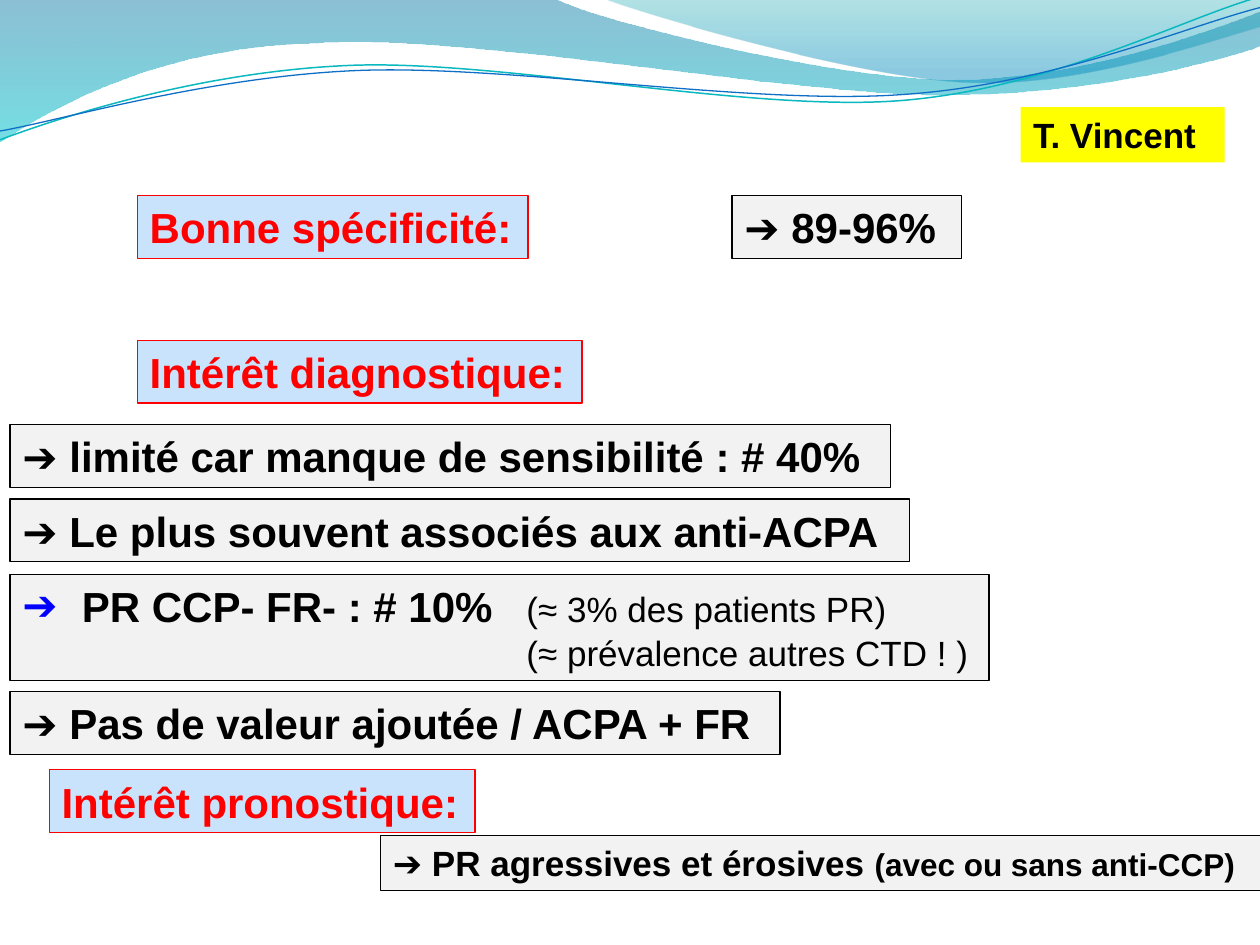
from math import cos, radians, sin

from lxml import etree
from pptx import Presentation
from pptx.dml.color import RGBColor
from pptx.enum.text import MSO_ANCHOR, MSO_AUTO_SIZE
from pptx.oxml.ns import qn
from pptx.util import Inches, Pt

RED = RGBColor(0xFF, 0x00, 0x00)
BLACK = RGBColor(0x00, 0x00, 0x00)
BLUE = RGBColor(0x00, 0x00, 0xFF)
YELLOW = RGBColor(0xFF, 0xFF, 0x00)
PALE_BLUE = RGBColor(0xC8, 0xE3, 0xFB)
PALE_GREY = RGBColor(0xF2, 0xF2, 0xF2)
DEEP_BLUE = RGBColor(0x00, 0x74, 0xA1)
CYAN = RGBColor(0x00, 0xC6, 0xCF)
TEAL = RGBColor(0x00, 0xA1, 0xA9)
SKY = RGBColor(0x00, 0x8B, 0xBF)
LINE_TEAL = RGBColor(0x0A, 0xB8, 0xBF)
LINE_BLUE = RGBColor(0x0F, 0x6F, 0xC6)

HEADING = {"fill": PALE_BLUE, "line": RED, "color": RED}
FINDING = {"fill": PALE_GREY, "line": BLACK, "color": BLACK}
LABEL = {"fill": YELLOW, "line": None, "color": BLACK}
TILT = -2.7  # degrees


def add_path(s, box, segments, close, tilt=0):
    """Freeform with curves: 2 numbers are a line end, 6 a Bezier curve."""
    left, top, width, height = box
    corners = [(left, top), (left + width, top), (left + width, top + height)]
    corners = [(Inches(x), Inches(y)) for x, y in corners]
    builder = s.shapes.build_freeform(*corners[0], scale=1.0)
    builder.add_line_segments(corners[1:], close=False)
    sp = builder.convert_to_shape()
    sp.shadow.inherit = False
    sp.rotation = tilt

    cx, cy = left + width / 2, top + height / 2
    c, n = cos(radians(tilt)), sin(radians(tilt))
    path = next(sp._element.iter(qn("a:path")))
    for child in list(path):
        path.remove(child)
    for i, seg in enumerate(segments):
        tag = "a:moveTo" if i == 0 else "a:lnTo" if len(seg) == 2 else "a:cubicBezTo"
        command = etree.SubElement(path, qn(tag))
        for x, y in zip(seg[::2], seg[1::2]):
            dx, dy = x - cx, y - cy
            pt = etree.SubElement(command, qn("a:pt"))
            pt.set("x", str(Inches(dx * c + dy * n + width / 2)))
            pt.set("y", str(Inches(dy * c - dx * n + height / 2)))
    if close:
        etree.SubElement(path, qn("a:close"))
    return sp


def add_wave(s, box, segments, stops):
    sp = add_path(s, box, segments, True)
    sp.line.fill.background()
    sp.fill.gradient()
    sp.fill.gradient_angle = 270
    for stop, (position, color, _) in zip(sp.fill.gradient_stops, stops):
        stop.position = position
        stop.color.rgb = color
    colors = sp._element.spPr.iter(qn("a:srgbClr"))
    for clr, (_, _, alpha) in zip(colors, stops):
        etree.SubElement(clr, qn("a:alpha")).set("val", str(alpha * 1000))


def add_strand(s, box, segments, color, width):
    sp = add_path(s, box, segments, False, TILT)
    sp.fill.background()
    sp.line.color.rgb = color
    sp.line.width = Pt(width)


def add_header(s):
    # Translucent waves
    add_wave(s, (-0.01, -0.01, 10.02, 1.14),
             [(0, 0), (4.4, -0.01), (4.76, 0.17, 6.64, 0.63, 7.58, 0.63),
              (8.53, 0.63, 9.58, 0.26, 10, 0.09), (10.01, 0.36),
              (9.83, 0.44, 8.7, 0.76, 7.46, 0.75),
              (6.22, 0.75, 3.82, 0.28, 2.57, 0.34),
              (1.29, 0.36, 0.46, 0.83, -0.01, 1.13), (0, 0)],
             [(0, DEEP_BLUE, 45), (1, CYAN, 55)])
    add_wave(s, (4.79, -0.01, 5.21, 0.7),
             [(4.79, -0.01), (5.09, 0.11, 6.82, 0.62, 7.69, 0.65),
              (8.56, 0.69, 9.61, 0.32, 10, 0.21), (10, 0), (4.79, -0.01)],
             [(0, TEAL, 30), (0.8, SKY, 45)])
    # Thin strands
    add_strand(s, (-0.02, 0.22, 10.02, 0.71),
               [(0, 1.11), (0.48, 0.93, 1.58, 0.57, 2.77, 0.52),
                (3.95, 0.47, 5.93, 0.89, 7.13, 0.8),
                (8.33, 0.71, 9.38, 0.15, 9.98, -0.02)], LINE_TEAL, 0.85)
    add_strand(s, (-0.02, 0.3, 10.03, 0.58),
               [(0, 1.04), (0.47, 0.96, 1.64, 0.61, 2.83, 0.56),
                (4.03, 0.51, 5.97, 0.84, 7.17, 0.75),
                (8.36, 0.67, 9.41, 0.21, 10, 0.06)], LINE_BLUE, 0.75)


def add_run(p, text, size, color, bold=True):
    r = p.add_run()
    r.text = text
    formats = {"name": "Arial", "size": Pt(size), "bold": bold}
    for name, value in formats.items():
        setattr(r.font, name, value)
    r.font.color.rgb = color


def add_box(s, box, style, runs=()):
    """Filled text box; runs are (text, size) pairs."""
    sp = s.shapes.add_textbox(*(Inches(v) for v in box))
    sp.fill.solid()
    sp.fill.fore_color.rgb = style["fill"]
    if style["line"] is not None:
        sp.line.color.rgb = style["line"]
        sp.line.width = Pt(0.75)
    tf = sp.text_frame
    formats = {"word_wrap": True, "vertical_anchor": MSO_ANCHOR.TOP,
               "auto_size": MSO_AUTO_SIZE.SHAPE_TO_FIT_TEXT}
    for name, value in formats.items():
        setattr(tf, name, value)
    for text, size in runs:
        add_run(tf.paragraphs[0], text, size, style["color"])
    return tf


def set_indent(p, left, first=0):
    pPr = p._p.get_or_add_pPr()
    pPr.set("marL", str(Inches(left)))
    pPr.set("indent", str(Inches(first)))
    return pPr


def add_seronegative(s, box):
    tf = add_box(s, box, FINDING)
    # Blue arrow bullet
    p = tf.paragraphs[0]
    pPr = set_indent(p, 0.38, -0.38)
    clr = etree.SubElement(pPr, qn("a:buClr"))
    etree.SubElement(clr, qn("a:srgbClr")).set("val", str(BLUE))
    etree.SubElement(pPr, qn("a:buFont")).set("typeface", "Arial")
    etree.SubElement(pPr, qn("a:buChar")).set("char", "➔")
    add_run(p, " ", 24, BLUE)
    add_run(p, "PR CCP- FR- : # 10%\t", 24, BLACK)
    add_run(p, "(≈ 3% des patients PR)", 20, BLACK, False)
    # Second remark under the first
    p = tf.add_paragraph()
    set_indent(p, 4)
    add_run(p, "(≈ prévalence autres CTD ! )", 20, BLACK, False)


def add_specificity(s, top):
    add_box(s, (1.09, top, 3.1, 0.5), HEADING, [("Bonne spécificité:", 24)])
    add_box(s, (5.81, top, 1.82, 0.5), FINDING, [("➔ 89-96%", 24)])


def add_diagnosis(s, top):
    add_box(s, (1.09, top, 3.53, 0.5), HEADING, [("Intérêt diagnostique:", 24)])
    left = 0.08
    for text, offset, width in [
            ("➔ limité car manque de sensibilité : # 40%", 0.67, 6.99),
            ("➔ Le plus souvent associés aux anti-ACPA", 1.26, 7.14),
            ("➔ Pas de valeur ajoutée / ACPA + FR", 2.79, 6.11)]:
        add_box(s, (left, top + offset, width, 0.5), FINDING, [(text, 24)])
    add_seronegative(s, (left, top + 1.86, 7.77, 0.84))


def add_prognosis(s, top):
    add_box(s, (0.39, top, 3.38, 0.5), HEADING, [("Intérêt pronostique:", 24)])
    add_box(s, (3.02, top + 0.52, 7, 0.44), FINDING,
            [("➔ PR agressives et érosives ", 20), ("(avec ou sans anti-CCP)", 18)])


def main():
    prs = Presentation()
    prs.slide_width, prs.slide_height = Inches(10), Inches(7.5)
    s = prs.slides.add_slide(prs.slide_layouts[6])
    add_header(s)
    add_specificity(s, 1.55)
    add_diagnosis(s, 2.7)
    add_prognosis(s, 6.11)
    add_box(s, (8.1, 0.85, 1.62, 0.44), LABEL, [("T. Vincent", 20)])
    prs.save("out.pptx")


if __name__ == "__main__":
    main()
